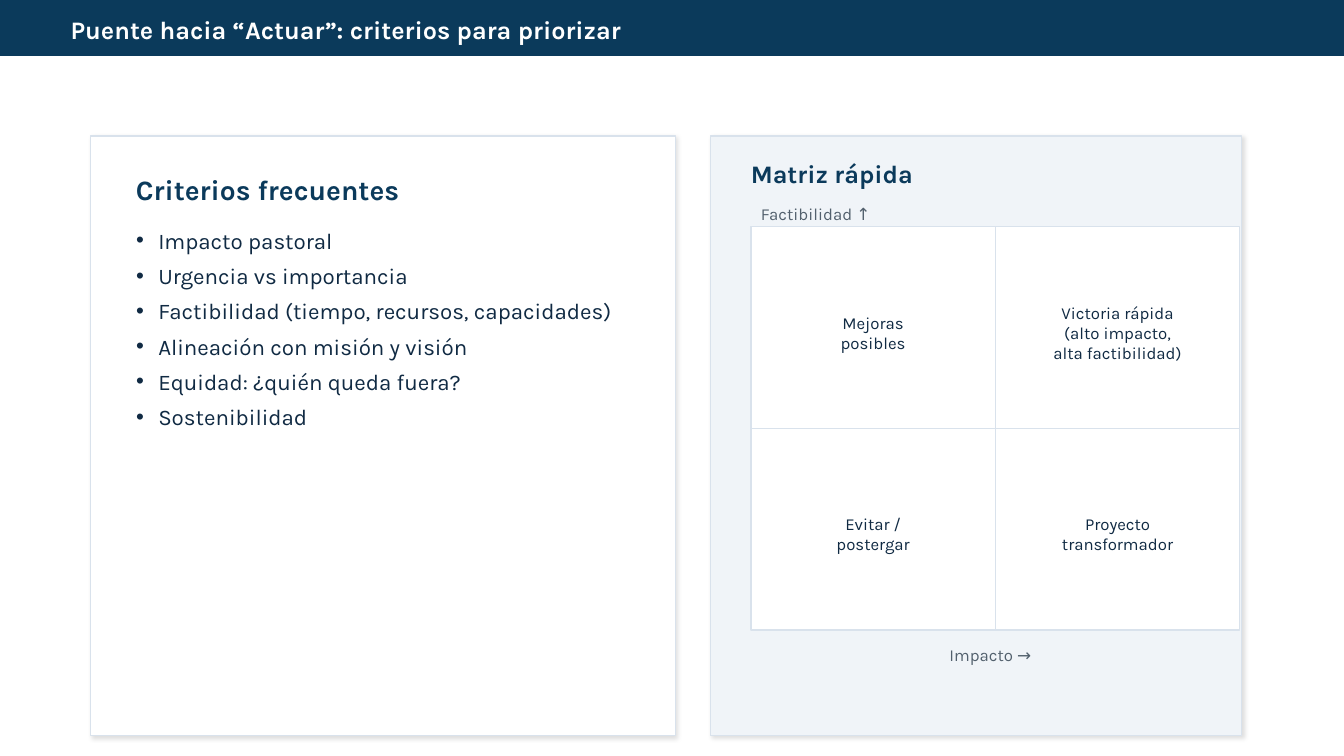
import pptx
import pptx.util
import pptx.dml.color
import pptx.enum.shapes
import pptx.enum.text
import pptx.oxml
import pptx.oxml.ns
from dataclasses import dataclass

Pt = pptx.util.Pt
ALIGN = pptx.enum.text.PP_ALIGN
ANCHOR = pptx.enum.text.MSO_ANCHOR

# Content
TITLE = "Puente hacia “Actuar”: criterios para priorizar"
CRITERIA_HEADING = "Criterios frecuentes"
CRITERIA = [
    "Impacto pastoral",
    "Urgencia vs importancia",
    "Factibilidad (tiempo, recursos, capacidades)",
    "Alineación con misión y visión",
    "Equidad: ¿quién queda fuera?",
    "Sostenibilidad",
]
MATRIX_HEADING = "Matriz rápida"
X_AXIS, Y_AXIS = "Impacto →", "Factibilidad ↑"
QUADRANTS = [
    [["Mejoras", "posibles"],
     ["Victoria rápida", "(alto impacto,", "alta factibilidad)"]],
    [["Evitar /", "postergar"], ["Proyecto", "transformador"]],
]


@dataclass(frozen=True)
class Theme:
    font: str = "Karla"
    navy: str = "0B3A5B"
    ink: str = "102A43"
    muted: str = "52606D"
    border: str = "D9E2EC"
    panel: str = "F0F4F8"
    white: str = "FFFFFF"
    title: int = 18
    heading: int = 20
    body: int = 16
    label: int = 12


THEME = Theme()

# Layout in points: left, top, width, height
BANNER = (0, 0, 960, 39.6)
TITLE_BOX = (43.2, 8.64, 878.4, 25.2)
CARD_TOP, CARD_HEIGHT = 97.2, 428.4
CRITERIA_CARD = (64.8, CARD_TOP, 417.6, CARD_HEIGHT)
MATRIX_CARD = (507.6, CARD_TOP, 379.44, CARD_HEIGHT)
CRITERIA_HEADING_BOX = (90, 118.8, 374.4, 32.4)
CRITERIA_BOX = (90, 158.4, 374.4, 352.8)
MATRIX_HEADING_BOX = (529.2, 111.6, 336.24, 25.2)
MATRIX = (536.4, 162, 349.2, 288)
AXIS_WIDTH, AXIS_HEIGHT, X_AXIS_GAP = 342, 18, 8.64
QUADRANT_INSET, QUADRANT_DROP, QUADRANT_TEXT_HEIGHT = 10.8, 18, 115.2
BULLET_INDENT = 15.84


def rgb(color):
    return pptx.dml.color.RGBColor.from_string(color)


def points(values):
    return [Pt(value) for value in values]


def add_panel(slide, box, fill, border, raised=False):
    panel = slide.shapes.add_shape(
        pptx.enum.shapes.MSO_SHAPE.RECTANGLE, *points(box))
    panel.fill.solid()
    panel.fill.fore_color.rgb = rgb(fill)
    panel.line.color.rgb = rgb(border)
    panel.line.width = Pt(1)
    panel.shadow.inherit = False
    if raised:
        effects = panel._element.spPr.find(pptx.oxml.ns.qn("a:effectLst"))
        effects.append(pptx.oxml.parse_xml(
            f'<a:outerShdw {pptx.oxml.ns.nsdecls("a")} blurRad="{Pt(3)}" '
            f'dist="{Pt(1.5)}" dir="2700000" algn="tl" rotWithShape="0">'
            '<a:srgbClr val="000000"><a:alpha val="12000"/></a:srgbClr>'
            '</a:outerShdw>'))


def add_divider(slide, x1, y1, x2, y2):
    divider = slide.shapes.add_connector(
        pptx.enum.shapes.MSO_CONNECTOR.STRAIGHT, *points((x1, y1, x2, y2)))
    divider.line.color.rgb = rgb(THEME.border)
    divider.line.width = Pt(1)
    divider._element.spPr.append(pptx.oxml.parse_xml(
        f'<a:effectLst {pptx.oxml.ns.nsdecls("a")}/>'))


def write(holder, lines, size, color, bold=False, align=ALIGN.LEFT,
          anchor=ANCHOR.MIDDLE, bullets=False):
    frame = holder.text_frame
    frame.word_wrap = True
    frame.auto_size = pptx.enum.text.MSO_AUTO_SIZE.NONE
    frame.vertical_anchor = anchor
    for index, line in enumerate(lines):
        paragraph = frame.add_paragraph() if index else frame.paragraphs[0]
        if bullets:
            props = paragraph._p.get_or_add_pPr()
            props.set("marL", str(Pt(BULLET_INDENT)))
            props.set("indent", str(-Pt(BULLET_INDENT)))
            props.append(pptx.oxml.parse_xml(
                f'<a:buChar {pptx.oxml.ns.nsdecls("a")} char="•"/>'))
        paragraph.alignment = align
        paragraph.space_before = Pt(0)
        paragraph.space_after = Pt(6 if bullets else 0)
        run = paragraph.add_run()
        run.text = line
        run.font.name = THEME.font
        run.font.size = Pt(size)
        run.font.bold = bold
        run.font.color.rgb = rgb(color)


def add_text(slide, box, lines, size, color, **style):
    write(slide.shapes.add_textbox(*points(box)), lines, size, color, **style)


def place(slide, placeholder, box):
    """Position a placeholder and bring it in front of the panels."""
    (placeholder.left, placeholder.top,
     placeholder.width, placeholder.height) = points(box)
    slide.shapes._spTree.append(placeholder._element)


def add_matrix(slide):
    left, top, width, height = MATRIX
    cell_width, cell_height = width / 2, height / 2
    add_panel(slide, MATRIX, THEME.white, THEME.border)
    add_divider(slide, left + cell_width, top, left + cell_width, top + height)
    add_divider(slide, left, top + cell_height, left + width, top + cell_height)

    # Axis labels
    add_text(slide, (left, top + height + X_AXIS_GAP, AXIS_WIDTH, AXIS_HEIGHT),
             [X_AXIS], THEME.label, THEME.muted, align=ALIGN.CENTER)
    add_text(slide, (left, top - AXIS_HEIGHT, AXIS_WIDTH, AXIS_HEIGHT),
             [Y_AXIS], THEME.label, THEME.muted)

    # Quadrant texts
    for row, quadrants in enumerate(QUADRANTS):
        for column, lines in enumerate(quadrants):
            box = (left + column * cell_width + QUADRANT_INSET,
                   top + row * cell_height + QUADRANT_DROP,
                   cell_width - 2 * QUADRANT_INSET, QUADRANT_TEXT_HEIGHT)
            add_text(slide, box, lines, THEME.label, THEME.ink,
                     align=ALIGN.CENTER)


def main():
    deck = pptx.Presentation()
    deck.slide_width, deck.slide_height = points((960, 540))
    slide = deck.slides.add_slide(deck.slide_layouts[1])
    title, criteria = slide.shapes.title, slide.placeholders[1]

    # Title banner
    add_panel(slide, BANNER, THEME.navy, THEME.navy)
    place(slide, title, TITLE_BOX)
    write(title, [TITLE], THEME.title, THEME.white, bold=True)

    # Criteria card
    add_panel(slide, CRITERIA_CARD, THEME.white, THEME.border, raised=True)
    add_text(slide, CRITERIA_HEADING_BOX, [CRITERIA_HEADING],
             THEME.heading, THEME.navy, bold=True)
    place(slide, criteria, CRITERIA_BOX)
    write(criteria, CRITERIA, THEME.body, THEME.ink,
          anchor=ANCHOR.TOP, bullets=True)

    # Matrix card
    add_panel(slide, MATRIX_CARD, THEME.panel, THEME.border, raised=True)
    add_text(slide, MATRIX_HEADING_BOX, [MATRIX_HEADING],
             THEME.title, THEME.navy, bold=True)
    add_matrix(slide)

    deck.save("out.pptx")


if __name__ == "__main__":
    main()
